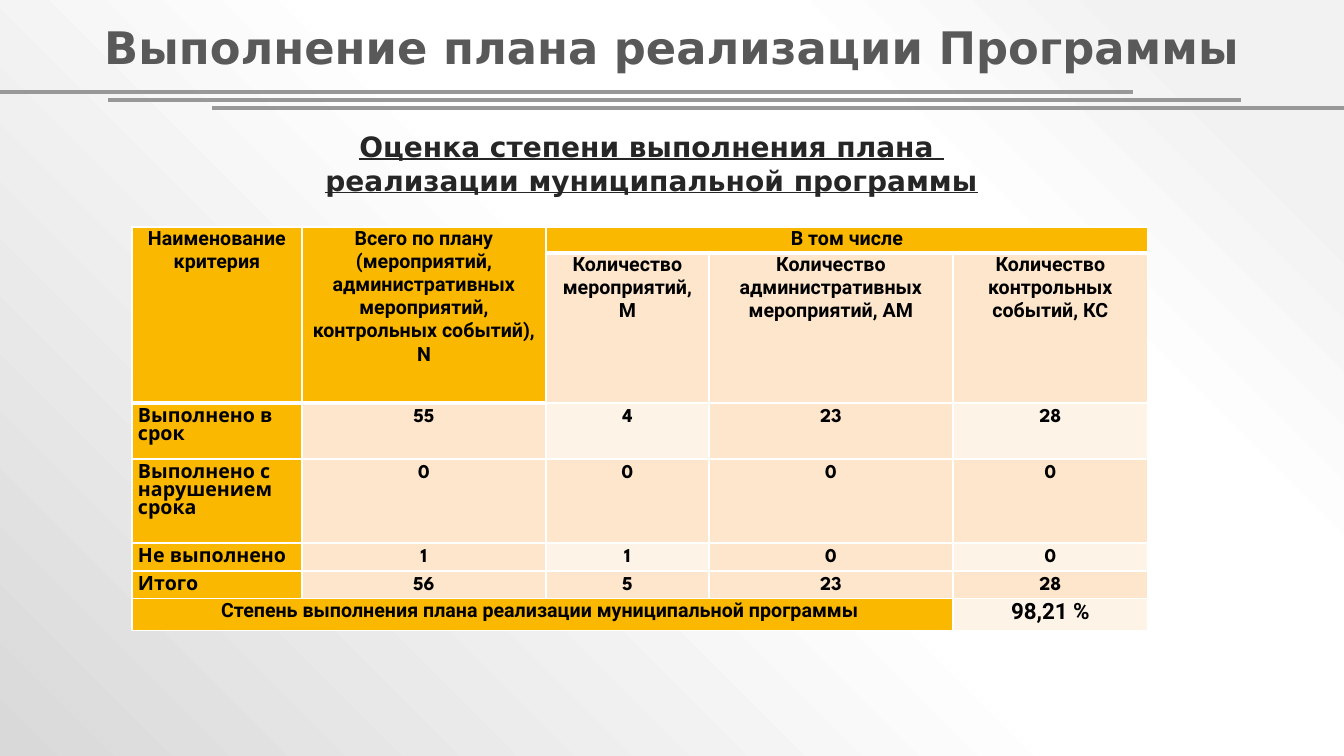
"""Build the slide on how far the programme's implementation plan was carried out."""
from lxml.etree import SubElement
from pptx import Presentation
from pptx.dml.color import RGBColor
from pptx.enum.shapes import MSO_CONNECTOR
from pptx.enum.text import MSO_ANCHOR, MSO_AUTO_SIZE, PP_ALIGN
from pptx.oxml import parse_xml
from pptx.oxml.ns import nsdecls, qn
from pptx.util import Emu, Pt

WHITE = RGBColor(0xFF, 0xFF, 0xFF)
BLACK = RGBColor(0x00, 0x00, 0x00)
RULE_GREY = RGBColor(0x98, 0x98, 0x98)
TITLE_GREY = RGBColor(0x59, 0x59, 0x59)
SUBTITLE_GREY = RGBColor(0x26, 0x26, 0x26)
AMBER = RGBColor(0xFA, 0xB9, 0x00)
PEACH = RGBColor(0xFD, 0xE6, 0xCC)
CREAM = RGBColor(0xFE, 0xF3, 0xE7)


def px(length):
    """Turn pixels into EMU."""
    return Emu(round(length * 914400 / 100.8))


def style(paragraph, font_name, size, color, alignment=PP_ALIGN.CENTER):
    """Format a bold paragraph."""
    paragraph.alignment = alignment
    paragraph.font.name = font_name
    paragraph.font.size = Pt(size)
    paragraph.font.bold = True
    paragraph.font.color.rgb = color


presentation = Presentation()
presentation.slide_width, presentation.slide_height = px(1344), px(756)
slide = presentation.slides.add_slide(presentation.slide_layouts[5])

slide.background.fill.solid()
background = slide.background.fill._xPr
stops = "".join(
    f'<a:gs pos="{position * 1000}"><a:srgbClr val="{color}"/></a:gs>'
    for position, color in ((10, "F2F2F2"), (28, "FFFFFF"), (48, "FFFFFF"), (100, "D9D9D9"))
)
gradient = parse_xml(
    f'<a:gradFill {nsdecls("a")} rotWithShape="1"><a:gsLst>{stops}</a:gsLst>'
    '<a:path path="circle"><a:fillToRect l="100000" b="100000"/></a:path></a:gradFill>'
)
background.replace(background.find(qn("a:solidFill")), gradient)

for left, right, y in ((0, 1133, 92), (108, 1241, 100), (212, 1344, 108)):
    rule = slide.shapes.add_connector(MSO_CONNECTOR.STRAIGHT, px(left), px(y), px(right), px(y))
    rule.line.color.rgb = RULE_GREY
    rule.line.width = Pt(2.25)
    SubElement(rule._element.spPr, qn("a:effectLst"))

title = slide.shapes.title
title.left, title.top, title.width, title.height = px(5), px(13), px(1334), px(68)
title.text_frame.text = "Выполнение плана реализации Программы"
title.text_frame.auto_size = MSO_AUTO_SIZE.NONE
title.text_frame.vertical_anchor = MSO_ANCHOR.MIDDLE
style(title.text_frame.paragraphs[0], "DejaVu Sans", 32, TITLE_GREY)

HEADINGS = [
    ["Наименование критерия",
     "Всего по плану (мероприятий, административных мероприятий, контрольных событий), N",
     "В том числе", "", ""],
    ["", "", "Количество мероприятий, М", "Количество административных мероприятий, АМ",
     "Количество контрольных событий, КС"],
]
RESULTS = [
    ["Выполнено в срок", "55", "4", "23", "28"],
    ["Выполнено с нарушением срока", "0", "0", "0", "0"],
    ["Не выполнено", "1", "1", "0", "0"],
    ["Итого", "56", "5", "23", "28"],
]
SUMMARY = ["Степень выполнения плана реализации муниципальной программы ", "", "", "", "98,21 %"]
ROWS = HEADINGS + RESULTS + [SUMMARY]
COLUMN_WIDTHS = [170, 244, 163, 244, 195]
ROW_HEIGHTS = [26, 150, 56, 84, 28, 28, 32]
LAST_ROW, LAST_COLUMN = len(ROWS) - 1, len(COLUMN_WIDTHS) - 1

table = slide.shapes.add_table(
    len(ROWS), len(COLUMN_WIDTHS), px(132), px(227), px(sum(COLUMN_WIDTHS)), px(sum(ROW_HEIGHTS))
).table
table.first_row = table.horz_banding = False
for column, width in zip(table.columns, COLUMN_WIDTHS):
    column.width = px(width)
for row, height in zip(table.rows, ROW_HEIGHTS):
    row.height = px(height)
for first, last in (((0, 0), (1, 0)), ((0, 1), (1, 1)), ((0, 2), (0, 4)), ((6, 0), (6, 3))):
    table.cell(*first).merge(table.cell(*last))

for row_index, texts in enumerate(ROWS):
    is_result = 2 <= row_index < LAST_ROW
    for column_index, text in enumerate(texts):
        cell = table.cell(row_index, column_index)
        cell.margin_left = cell.margin_right = px(6)
        cell.margin_top = px(6 if is_result else 0)
        cell.margin_bottom = 0
        ends_heading = row_index == 0 or (row_index == 1 and column_index < 2)
        for side in "LRTB":
            width = Pt(3) if side == "B" and ends_heading else Pt(1)
            cell._tc.get_or_add_tcPr().append(parse_xml(
                f'<a:ln{side} {nsdecls("a")} w="{width}"><a:solidFill>'
                f'<a:srgbClr val="{WHITE}"/></a:solidFill></a:ln{side}>'
            ))
        is_summary_label = row_index == LAST_ROW and column_index < LAST_COLUMN
        cell.fill.solid()
        if column_index == 0 or ends_heading or is_summary_label:
            cell.fill.fore_color.rgb = AMBER
        elif row_index in (2, 4, 6) and column_index in (2, 4):
            cell.fill.fore_color.rgb = CREAM
        else:
            cell.fill.fore_color.rgb = PEACH
        if text:
            cell.text = text
            style(
                cell.text_frame.paragraphs[0],
                "League Spartan" if is_result else "Roboto",
                16 if row_index == LAST_ROW and column_index == LAST_COLUMN else 14,
                BLACK,
                PP_ALIGN.LEFT if is_result and column_index == 0 else PP_ALIGN.CENTER,
            )

subtitle = slide.shapes.add_textbox(px(243), px(125), px(817), px(78)).text_frame
subtitle.word_wrap = True
subtitle.auto_size = MSO_AUTO_SIZE.SHAPE_TO_FIT_TEXT
subtitle.text = "Оценка степени выполнения плана \nреализации муниципальной программы"
for paragraph in subtitle.paragraphs:
    style(paragraph, "DejaVu Sans", 20, SUBTITLE_GREY)
    paragraph.font.underline = True

presentation.save("out.pptx")
